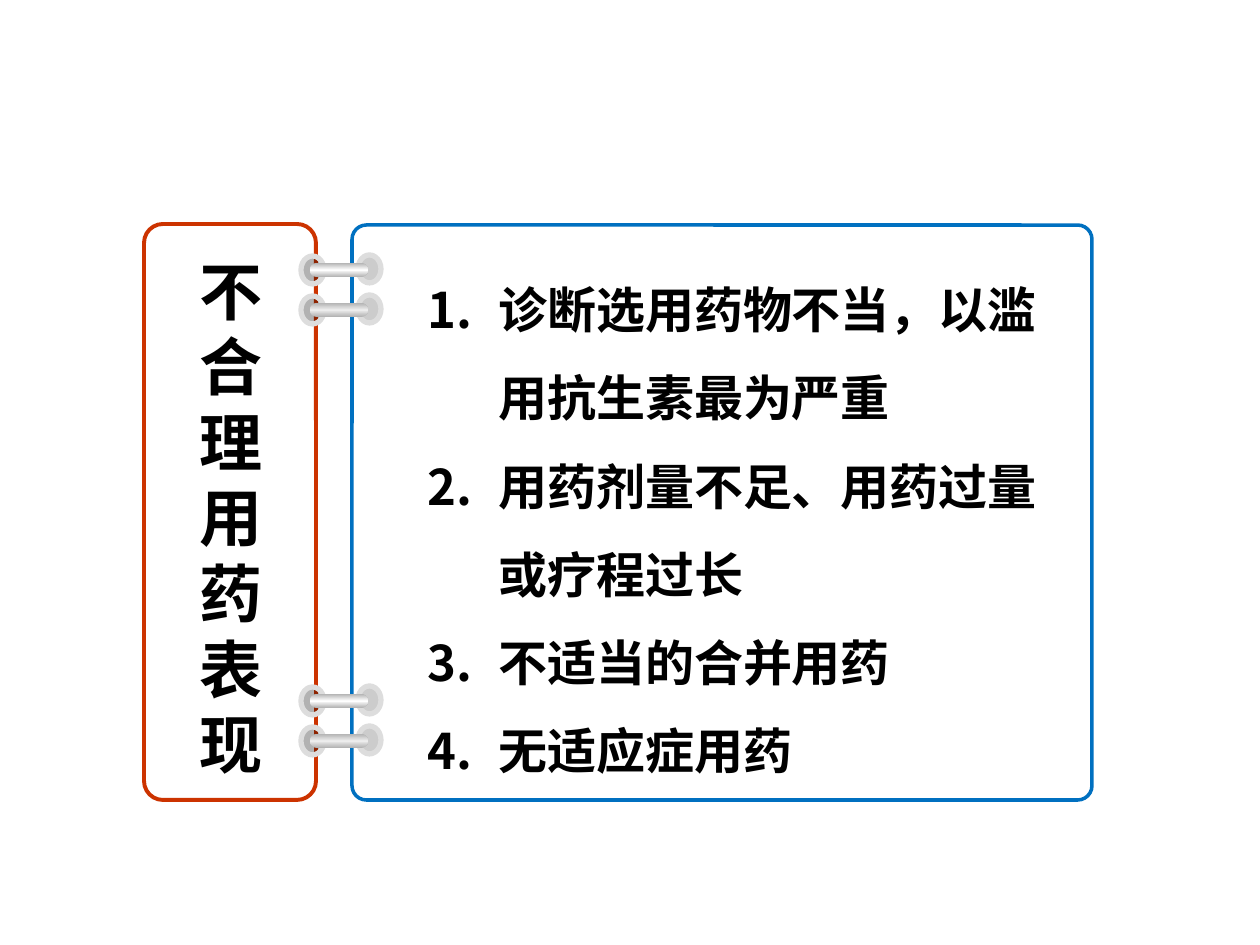
from copy import deepcopy

from lxml.etree import SubElement
from pptx import Presentation
from pptx.dml.color import RGBColor
from pptx.enum.shapes import MSO_SHAPE
from pptx.enum.text import MSO_ANCHOR
from pptx.oxml.ns import qn
from pptx.util import Pt

PX = 914400 // 126
BLACK = RGBColor(0x00, 0x00, 0x00)
WHITE = RGBColor(0xFF, 0xFF, 0xFF)
RED = RGBColor(0xCC, 0x33, 0x00)
BLUE = RGBColor(0x00, 0x70, 0xC0)
RING_GREY = RGBColor(0xDD, 0xDD, 0xDD)
ROD_GREY = RGBColor(0xB2, 0xB2, 0xB2)
ROD_SHEEN = RGBColor(0xED, 0xED, 0xED)
CJK_FONT = "Noto Sans CJK SC"

TITLE = "不合理用药表现"
ITEMS = [
    "诊断选用药物不当，以滥用抗生素最为严重",
    "用药剂量不足、用药过量或疗程过长",
    "不适当的合并用药",
    "无适应症用药",
]


def add_shape(slide, kind, x, y, w, h, line=None, width=0):
    sp = slide.shapes.add_shape(kind, x * PX, y * PX, w * PX, h * PX)
    sp.shadow.inherit = False
    if line is None:
        sp.line.fill.background()
    else:
        sp.line.color.rgb = line
        sp.line.width = Pt(width)
    return sp


def fill_solid(sp, color, alpha=100):
    """Fill with one colour; alpha is the opacity in percent."""
    sp.fill.solid()
    sp.fill.fore_color.rgb = color
    if alpha < 100:
        srgb = sp.fill._xPr.find(f".//{qn('a:srgbClr')}")
        SubElement(srgb, qn("a:alpha"), val=str(alpha * 1000))


def fill_sheen(sp, edge, middle):
    """Fill with a vertical gradient that runs edge, middle, edge."""
    sp.fill.gradient()
    sp.fill.gradient_angle = 90
    stop_list = sp.fill._xPr.find(f".//{qn('a:gsLst')}")
    stop_list.append(deepcopy(stop_list[-1]))
    for stop, position, color in zip(sp.fill.gradient_stops, (0, 0.5, 1), (edge, middle, edge)):
        stop.position = position
        stop.color.rgb = color


def add_text(slide, x, y, w, h, lines, font, size):
    tf = slide.shapes.add_textbox(x * PX, y * PX, w * PX, h * PX).text_frame
    tf.word_wrap = True
    tf.vertical_anchor = MSO_ANCHOR.TOP
    tf.text = "\n".join(lines)
    for p in tf.paragraphs:
        for r in p.runs:
            r.font.name = font
            r.font.size = Pt(size)
            r.font.bold = True
            r.font.color.rgb = BLACK
            SubElement(r.font._element, qn("a:ea"), typeface=CJK_FONT)
    return tf


def number_paragraph(p, left, hanging):
    pPr = p._p.get_or_add_pPr()
    pPr.set("marL", str(left * PX))
    pPr.set("indent", str(-hanging * PX))
    p.line_spacing = 1.5
    SubElement(pPr, qn("a:buFont"), typeface=CJK_FONT)
    SubElement(pPr, qn("a:buAutoNum"), type="arabicPeriod")


def title_card(slide, x, y, w, h):
    card = add_shape(slide, MSO_SHAPE.ROUNDED_RECTANGLE, x, y, w, h, RED, 2.25)
    card.adjustments[0] = 0.11
    fill_solid(card, WHITE, 70)


def list_card(slide, x, y, w, h):
    card = add_shape(slide, MSO_SHAPE.ROUNDED_RECTANGLE, x, y, w, h, BLUE, 2)
    card.adjustments[0] = 0.025
    fill_solid(card, WHITE)


def binder_ring(slide, x, y, sheen):
    """Two punched holes joined by a rod, with the top left corner at x, y."""
    for dx, dy, alpha in ((57, 0, 20), (0, 1, 30)):
        hole = add_shape(slide, MSO_SHAPE.OVAL, x + dx, y + dy, 23, 28, RING_GREY, 3)
        fill_solid(hole, BLACK, alpha)
    rod = add_shape(slide, MSO_SHAPE.ROUNDED_RECTANGLE, x + 9, y + 8, 58, 14)
    rod.adjustments[0] = 0.5
    fill_sheen(rod, ROD_GREY, sheen)


def binder_pair(slide, x, y):
    binder_ring(slide, x, y + 40, ROD_SHEEN)
    binder_ring(slide, x, y, WHITE)


def main():
    prs = Presentation()
    prs.slide_width, prs.slide_height = 1260 * PX, 945 * PX
    slide = prs.slides.add_slide(prs.slide_layouts[6])

    title_card(slide, 144, 224, 172, 576)
    list_card(slide, 352, 225, 740, 575)
    for y in (255, 686):
        binder_pair(slide, 301, y)

    add_text(slide, 187, 246, 69, 547, [TITLE], "Arial", 36)
    tf = add_text(slide, 352, 244, 737, 533, ITEMS, CJK_FONT, 28)
    for p in tf.paragraphs:
        number_paragraph(p, 134, 71)

    prs.save("out.pptx")


if __name__ == "__main__":
    main()
